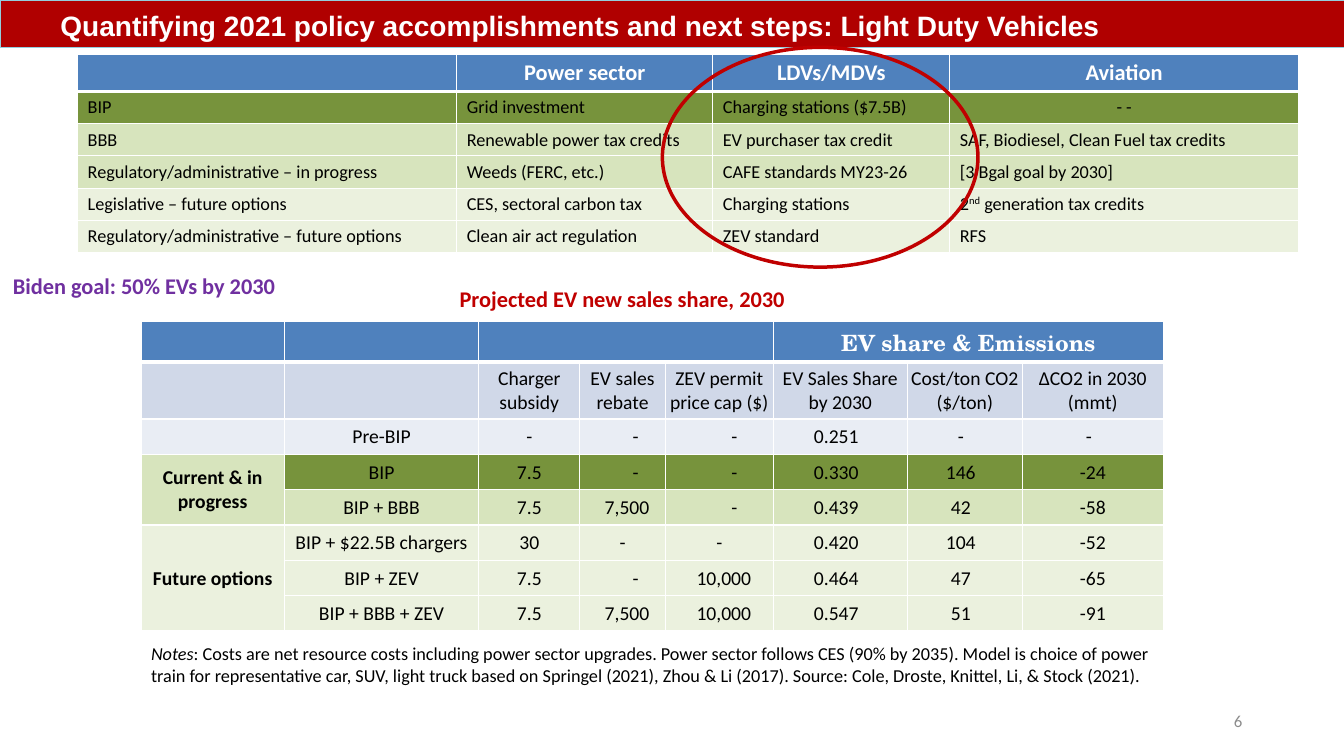
"""Build the slide on light duty vehicle policy."""
from pptx import Presentation
from pptx.dml.color import RGBColor as RGB
from pptx.enum.shapes import MSO_SHAPE as Shape
from pptx.enum.text import MSO_ANCHOR as Anchor, PP_ALIGN as Align
from pptx.oxml import parse_xml
from pptx.oxml.ns import nsdecls
from pptx.util import Inches, Pt

WHITE = RGB(0xFF, 0xFF, 0xFF)
BLACK = RGB(0x00, 0x00, 0x00)
GREY = RGB(0x8C, 0x8C, 0x8C)
RED = RGB(0xB0, 0x00, 0x00)
CRIMSON = RGB(0xC0, 0x00, 0x00)
PURPLE = RGB(0x70, 0x30, 0xA0)
SKY = RGB(0x93, 0xCD, 0xDD)
BLUE = RGB(0x4F, 0x81, 0xBD)
PALE = RGB(0xD0, 0xD8, 0xE8)
MIST = RGB(0xE9, 0xED, 0xF4)
OLIVE = RGB(0x77, 0x93, 0x3C)
LIME = RGB(0xD7, 0xE4, 0xBD)
CREAM = RGB(0xEB, 0xF1, 0xDE)

SUPER = "super"
ITALIC = "italic"

POLICY = [
    ["", "Power sector", "LDVs/MDVs", "Aviation"],
    ["BIP", "Grid investment", "Charging stations ($7.5B)", "- -"],
    ["BBB", "Renewable power tax credits", "EV purchaser tax credit",
     "SAF, Biodiesel, Clean Fuel tax credits"],
    ["Regulatory/administrative – in progress", "Weeds (FERC, etc.)",
     "CAFE standards MY23-26", "[3 Bgal goal by 2030]"],
    ["Legislative – future options", "CES, sectoral carbon tax", "Charging stations",
     [("2", ""), ("nd", SUPER), (" generation tax credits", "")]],
    ["Regulatory/administrative – future options", "Clean air act regulation",
     "ZEV standard", "RFS"],
]
SHARE = [
    ["", "", "", "", "", "EV share & Emissions", "", ""],
    ["", "", "Charger subsidy", "EV sales rebate", "ZEV permit price cap ($)",
     "EV Sales Share by 2030", "Cost/ton CO2 ($/ton)", "ΔCO2 in 2030 (mmt)"],
    ["", "Pre-BIP", "-", "-", "-", "0.251", "-", "-"],
    ["Current & in progress", "BIP", "7.5", "-", "-", "0.330", "146", "-24"],
    ["", "BIP + BBB", "7.5", "7,500", "-", "0.439", "42", "-58"],
    ["Future options", "BIP + $22.5B chargers", "30", "-", "-", "0.420", "104", "-52"],
    ["", "BIP + ZEV", "7.5", "-", "10,000", "0.464", "47", "-65"],
    ["", "BIP + BBB + ZEV", "7.5", "7,500", "10,000", "0.547", "51", "-91"],
]
NOTES = [
    ("Notes", ITALIC),
    (": Costs are net resource costs including power sector upgrades. Power sector "
     "follows CES (90% by 2035). Model is choice of power train for representative car, "
     "SUV, light truck based on Springel (2021), Zhou & Li (2017). Source: Cole, Droste, "
     "Knittel, Li, & Stock (2021).", ""),
]


def write(frame, text, size=13, color=BLACK, bold=False, face="Calibri", align=Align.LEFT):
    """Write a string, or a list of (string, style) runs, as one paragraph."""
    para = frame.paragraphs[0]
    para.alignment = align
    for part, style in [(text, "")] if isinstance(text, str) else text:
        run = para.add_run()
        run.text = part
        font = run.font
        font.size, font.bold, font.name = Pt(size), bold, face
        font.color.rgb = color
        if style == ITALIC:
            font.italic = True
        if style == SUPER:
            run._r.get_or_add_rPr().set("baseline", "30000")


def label(slide, box, text, wrap=True, anchor=Anchor.TOP, **form):
    """Place a text box."""
    frame = slide.shapes.add_textbox(*map(Inches, box)).text_frame
    frame.word_wrap = wrap
    frame.vertical_anchor = anchor
    write(frame, text, **form)


def banner(slide, box, text):
    """Draw the title bar."""
    bar = slide.shapes.add_shape(Shape.RECTANGLE, *map(Inches, box))
    bar.shadow.inherit = False
    bar.fill.solid()
    bar.fill.fore_color.rgb = RED
    bar.line.color.rgb = SKY
    bar.line.width = Pt(0.25)
    frame = bar.text_frame
    frame.margin_left = Inches(0.6)
    frame.vertical_anchor = Anchor.BOTTOM
    write(frame, text, size=20, color=WHITE, bold=True, face="Arial")


def ring(slide, box):
    """Circle the vehicle column."""
    oval = slide.shapes.add_shape(Shape.OVAL, *map(Inches, box))
    oval.shadow.inherit = False
    oval.fill.background()
    oval.line.color.rgb = CRIMSON
    oval.line.width = Pt(2.5)


def grid(slide, spot, cols, rows):
    """Add a bare table with the given column widths and row heights."""
    box = (*spot, sum(cols), sum(rows))
    table = slide.shapes.add_table(len(rows), len(cols), *map(Inches, box)).table
    for col, wide in zip(table.columns, cols):
        col.width = Inches(wide)
    for row, high in zip(table.rows, rows):
        row.height = Inches(high)
    return table


def paint(cell, row, fill):
    """Give a cell white borders, thick under the header, and a fill."""
    props = cell._tc.get_or_add_tcPr()
    for side in "LRTB":
        thick = (row, side) in ((0, "B"), (1, "T"))
        props.append(parse_xml(
            f'<a:ln{side} {nsdecls("a")} w="{Pt(3 if thick else 1)}"><a:solidFill>'
            f'<a:srgbClr val="{WHITE}"/></a:solidFill></a:ln{side}>'))
    cell.fill.solid()
    cell.fill.fore_color.rgb = fill


def inset(cell, left=0.01, right=0.01):
    """Tighten the margins of a cell."""
    cell.margin_left, cell.margin_right = Inches(left), Inches(right)
    cell.margin_top, cell.margin_bottom = Inches(0.01), 0


def policy(slide, spot):
    """Build the table of policies by sector."""
    table = grid(slide, spot, [3.76, 2.54, 2.35, 3.46], [0.36] + [0.32] * 5)
    fills = [BLUE, OLIVE, LIME, LIME, CREAM, CREAM]
    for r, (line, fill) in enumerate(zip(POLICY, fills)):
        for c, text in enumerate(line):
            cell = table.cell(r, c)
            paint(cell, r, fill)
            if not text:
                inset(cell)
            elif r == 0:
                write(cell.text_frame, text, size=16, color=WHITE, bold=True,
                      align=Align.CENTER)
            else:
                write(cell.text_frame, text,
                      align=Align.CENTER if text == "- -" else Align.LEFT)


def pads(r, c, text):
    """Return the side margins that line up the figures of a column."""
    if r > 1 and c in (3, 4) and r != 5:
        return (0.23 + 0.04 * (c - 2) if text == "-" else 0.1), 0.01
    if r > 1 and (c in (5, 6) or (r, c) == (2, 7)):
        return 0.01, 0.09
    return 0.01, 0.01


def share(slide, spot):
    """Build the table of sales shares and emissions."""
    table = grid(slide, spot, [1.42, 1.93, 1, 0.85, 1.07, 1.33, 1.14, 1.4],
                 [0.4, 0.56] + [0.35] * 6)
    fills = [BLUE, PALE, MIST, OLIVE, LIME, CREAM, CREAM, CREAM]
    for r, (line, fill) in enumerate(zip(SHARE, fills)):
        for c, text in enumerate(line):
            cell = table.cell(r, c)
            paint(cell, r, LIME if (r, c) == (3, 0) else fill)
            cell.vertical_anchor = Anchor.MIDDLE
            if (r, c) != (1, 2):
                inset(cell, *pads(r, c, text))
            if text and r == 0:
                write(cell.text_frame, text, size=16, color=WHITE, bold=True,
                      face="TeX Gyre Schola", align=Align.CENTER)
            elif text:
                write(cell.text_frame, text, size=14, bold=c == 0, align=Align.CENTER)
    for top, left, end, right in [(0, 2, 0, 4), (0, 5, 0, 7), (3, 0, 4, 0), (5, 0, 7, 0)]:
        table.cell(top, left).merge(table.cell(end, right))


def main():
    """Assemble and save the slide."""
    deck = Presentation()
    deck.slide_width, deck.slide_height = Inches(13.33), Inches(7.5)
    slide = deck.slides.add_slide(deck.slide_layouts[6])
    banner(slide, (0, 0, 13.33, 0.47),
           "Quantifying 2021 policy accomplishments and next steps: Light Duty Vehicles")
    label(slide, (9.42, 6.95, 3, 0.4), "6", anchor=Anchor.MIDDLE, size=12, color=GREY,
          align=Align.RIGHT)
    policy(slide, (0.77, 0.54))
    label(slide, (0.03, 2.65, 3.13, 0.37), "Biden goal: 50% EVs by 2030", size=16,
          color=PURPLE, bold=True)
    ring(slide, (6.57, 0.47, 3.13, 2.18))
    share(slide, (1.4, 3.19))
    label(slide, (4.46, 2.78, 3.47, 0.37), "Projected EV new sales share, 2030",
          wrap=False, size=16, color=CRIMSON, bold=True)
    label(slide, (1.4, 6.32, 10.13, 0.76), NOTES)
    deck.save("out.pptx")


if __name__ == "__main__":
    main()
